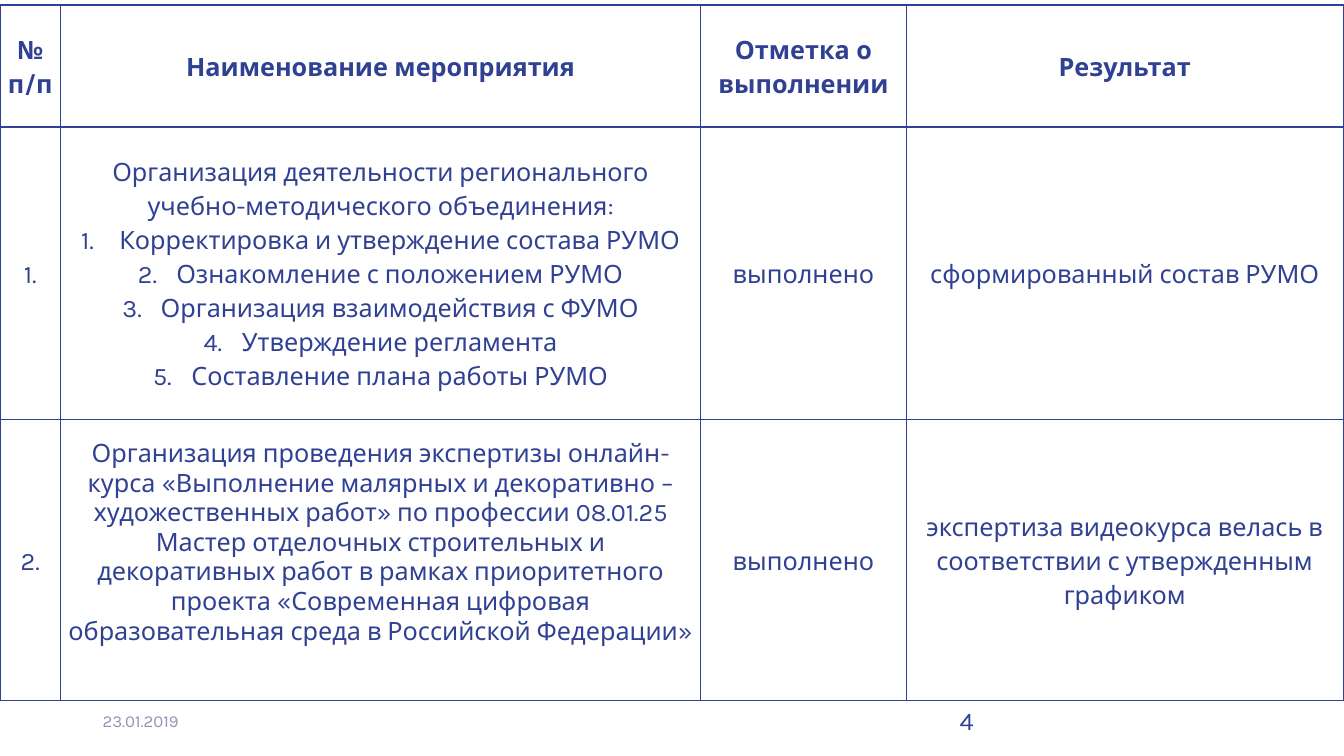
from dataclasses import dataclass

from lxml import etree
from pptx import Presentation
from pptx import util as u
from pptx.dml import color
from pptx.enum import text
from pptx.oxml import ns

SLIDE_WIDTH, SLIDE_HEIGHT = u.Inches(13.33), u.Inches(7.5)
NAVY, MUTED = "304194", "8F93B7"
FONT = "Karla"
COLUMNS = (4.5, 47.64, 15.3, 32.5)
ROWS = (16.13, 38.67, 37.2)
TABLE_TOP = 0.67
NUMBER_INDENT = 2.85
SPACED = 1.15


@dataclass(frozen=True)
class Entry:
    lines: tuple[str, ...]
    numbered: tuple[str, ...] = ()
    spacing: float = SPACED
    bottom: float = 0


@dataclass(frozen=True)
class FooterItem:
    wording: str
    left: float
    size: int
    tint: str
    anchor: text.MSO_ANCHOR


HEADINGS = (
    Entry(("№", "п/п")),
    Entry(("Наименование мероприятия",)),
    Entry(("Отметка о выполнении",)),
    Entry(("Результат",)),
)
ACTIVITIES = (
    (
        Entry(("1.",)),
        Entry(
            ("Организация деятельности регионального учебно-методического объединения:",),
            numbered=(
                "Корректировка и утверждение состава РУМО",
                "Ознакомление с положением РУМО",
                "Организация взаимодействия с ФУМО",
                "Утверждение регламента",
                "Составление плана работы РУМО",
            ),
        ),
        Entry(("выполнено",)),
        Entry(("сформированный состав РУМО",)),
    ),
    (
        Entry(("2.",)),
        Entry(
            (
                "Организация проведения экспертизы онлайн-курса «Выполнение малярных и "
                "декоративно – художественных работ» по профессии 08.01.25 Мастер "
                "отделочных строительных и декоративных работ в рамках приоритетного "
                "проекта «Современная цифровая образовательная среда в Российской Федерации»",
            ),
            spacing=1.0,
            bottom=4.5,
        ),
        Entry(("выполнено",)),
        Entry(("экспертиза видеокурса велась в соответствии с утвержденным графиком",)),
    ),
)
FOOTER = (
    FooterItem("23.01.2019", 6.9, 12, MUTED, text.MSO_ANCHOR.MIDDLE),
    FooterItem("4", 70.67, 18, NAVY, text.MSO_ANCHOR.TOP),
)


def across(percent: float) -> u.Emu:
    return u.Emu(round(SLIDE_WIDTH * percent / 100))


def down(percent: float) -> u.Emu:
    return u.Emu(round(SLIDE_HEIGHT * percent / 100))


def rgb(value: str) -> color.RGBColor:
    return color.RGBColor.from_string(value)


def style(paragraph, size: int, tint: str, bold: bool = False) -> None:
    font = paragraph.font
    font.name, font.size, font.bold = FONT, u.Pt(size), bold
    font.color.rgb = rgb(tint)


def number(paragraph) -> None:
    properties = paragraph._p.get_or_add_pPr()
    indent = across(NUMBER_INDENT)
    properties.set("marL", str(indent))
    properties.set("indent", str(-indent))
    etree.SubElement(properties, ns.qn("a:buFont"), typeface="+mj-lt")
    etree.SubElement(properties, ns.qn("a:buAutoNum"), type="arabicPeriod")


def outline(cell) -> None:
    properties = cell._tc.get_or_add_tcPr()
    for position, side in enumerate(("lnL", "lnR", "lnT", "lnB")):
        border = etree.Element(ns.qn(f"a:{side}"), w=str(u.Pt(1)))
        fill = etree.SubElement(border, ns.qn("a:solidFill"))
        etree.SubElement(fill, ns.qn("a:srgbClr"), val=NAVY)
        properties.insert(position, border)


def fill_cell(cell, entry: Entry, bold: bool) -> None:
    cell.fill.background()
    outline(cell)
    cell.vertical_anchor = text.MSO_ANCHOR.MIDDLE
    cell.margin_left = cell.margin_right = u.Inches(0.07)
    cell.margin_top, cell.margin_bottom = 0, down(entry.bottom)
    frame = cell.text_frame
    for index, wording in enumerate(entry.lines + entry.numbered):
        paragraph = frame.add_paragraph() if index else frame.paragraphs[0]
        paragraph.text = wording
        paragraph.alignment = text.PP_ALIGN.CENTER
        paragraph.line_spacing = entry.spacing
        if index >= len(entry.lines):
            number(paragraph)
        style(paragraph, 18, NAVY, bold)


def draw_activities(slide) -> None:
    entries = (HEADINGS, *ACTIVITIES)
    table = slide.shapes.add_table(
        len(ROWS), len(COLUMNS), 0, down(TABLE_TOP), across(sum(COLUMNS)), down(sum(ROWS))
    ).table
    table.horz_banding = False
    table.first_row = False
    for column, share in zip(table.columns, COLUMNS):
        column.width = across(share)
    for row, share, row_entries in zip(table.rows, ROWS, entries):
        row.height = down(share)
        for cell, entry in zip(row.cells, row_entries):
            fill_cell(cell, entry, bold=row_entries is HEADINGS)


def draw_footer(slide, item: FooterItem) -> None:
    frame = slide.shapes.add_textbox(
        across(item.left), down(92.67), across(22.5), down(5.33)
    ).text_frame
    frame.word_wrap = True
    frame.vertical_anchor = item.anchor
    frame.text = item.wording
    style(frame.paragraphs[0], item.size, item.tint)


def main() -> None:
    deck = Presentation()
    deck.slide_width, deck.slide_height = SLIDE_WIDTH, SLIDE_HEIGHT
    slide = deck.slides.add_slide(deck.slide_layouts[6])
    for item in FOOTER:
        draw_footer(slide, item)
    draw_activities(slide)
    deck.save("out.pptx")


if __name__ == "__main__":
    main()
